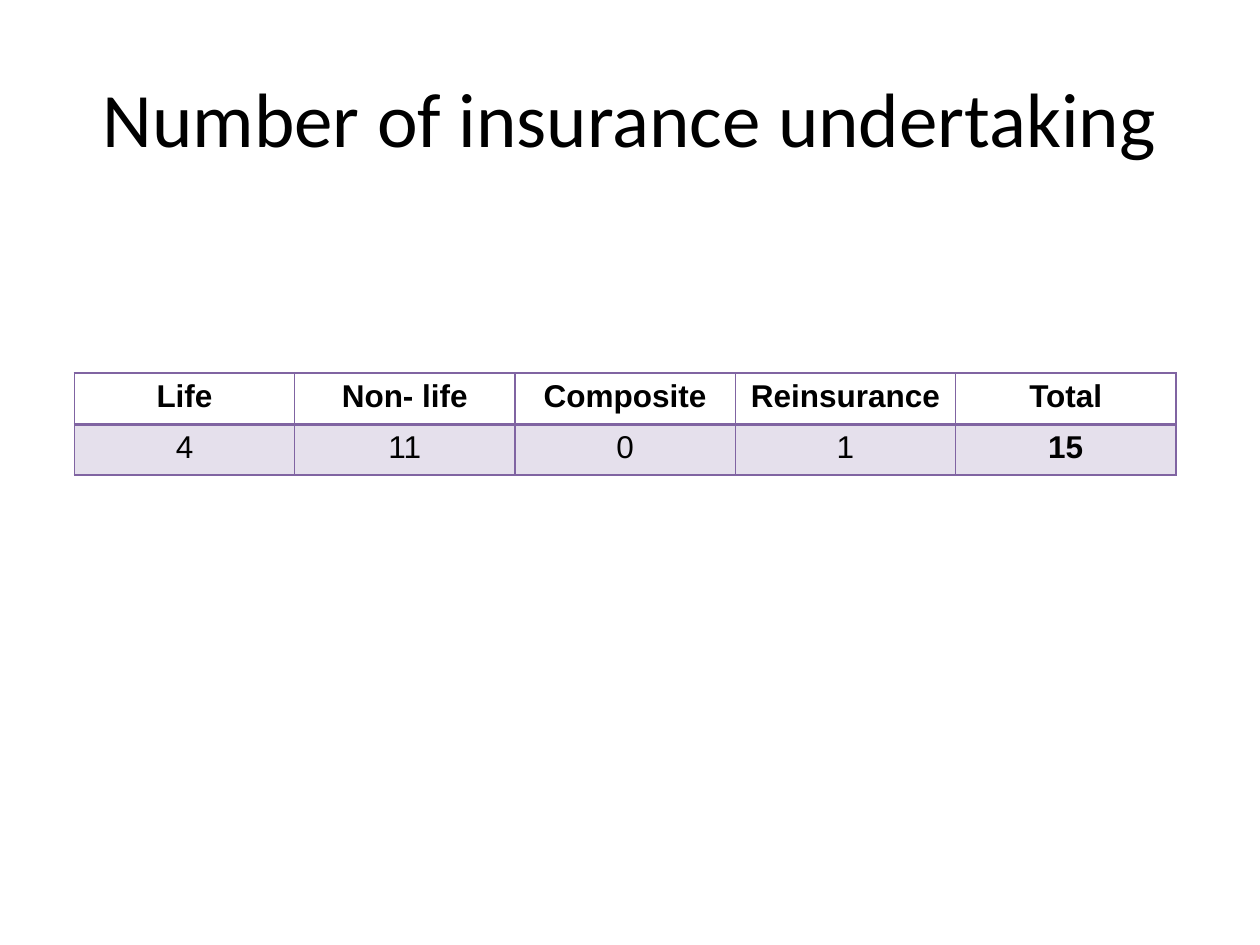
import pptx
import pptx.dml.color
import pptx.enum.text
import pptx.oxml.ns
import pptx.util
from lxml import etree

Pt = pptx.util.Pt
RGBColor = pptx.dml.color.RGBColor
CENTER = pptx.enum.text.PP_ALIGN.CENTER
MIDDLE = pptx.enum.text.MSO_ANCHOR.MIDDLE
qn = pptx.oxml.ns.qn

# Content
TITLE = "Number of insurance undertaking"
ROWS = [
    ["Life", "Non- life", "Composite", "Reinsurance", "Total"],
    ["4", "11", "0", "1", "15"],
]
COLORS = {"text": "000000", "accent": "8064A2"}

# Layout in points
SLIDE_SIZE = (720, 540)
TITLE_BOX = (36, 21.6, 648, 90)
TABLE_LEFT, TABLE_TOP = 42.5, 213.1
COLUMN_WIDTH, ROW_HEIGHT = 125.9, 29.2
LINE, HEADER_LINE = 1, 2
BAND_OPACITY = 20


def style_paragraph(paragraph, font_name, size, bold=False):
    paragraph.alignment = CENTER
    paragraph.font.name = font_name
    paragraph.font.size = Pt(size)
    paragraph.font.bold = bold
    paragraph.font.color.rgb = RGBColor.from_string(COLORS["text"])


def add_border(properties, position, side, width):
    line = etree.Element(qn(f"a:ln{side}"), w=str(int(Pt(width))))
    fill = etree.SubElement(line, qn("a:solidFill"))
    etree.SubElement(fill, qn("a:srgbClr"), val=COLORS["accent"])
    properties.insert(position, line)


presentation = pptx.Presentation()
presentation.slide_width, presentation.slide_height = map(Pt, SLIDE_SIZE)
slide = presentation.slides.add_slide(presentation.slide_layouts[6])

# Title
title_frame = slide.shapes.add_textbox(*map(Pt, TITLE_BOX)).text_frame
title_frame.word_wrap = True
title_frame.vertical_anchor = MIDDLE
title_frame.text = TITLE
style_paragraph(title_frame.paragraphs[0], "Calibri", 44)

# Table
row_count, column_count = len(ROWS), len(ROWS[0])
table = slide.shapes.add_table(
    row_count, column_count, Pt(TABLE_LEFT), Pt(TABLE_TOP),
    Pt(COLUMN_WIDTH * column_count), Pt(ROW_HEIGHT * row_count)).table
for column in table.columns:
    column.width = Pt(COLUMN_WIDTH)

for row_index, values in enumerate(ROWS):
    table.rows[row_index].height = Pt(ROW_HEIGHT)
    is_header = row_index == 0
    for column_index, value in enumerate(values):
        cell = table.cell(row_index, column_index)
        cell.text = value
        is_total = column_index == column_count - 1
        style_paragraph(cell.text_frame.paragraphs[0], "Arial", 18, is_header or is_total)

        # Clear header, translucent values
        if is_header:
            cell.fill.background()
        else:
            cell.fill.solid()
            cell.fill.fore_color.rgb = RGBColor.from_string(COLORS["accent"])
            color = cell.fill._xPr.find(".//" + qn("a:srgbClr"))
            etree.SubElement(color, qn("a:alpha"), val=str(BAND_OPACITY * 1000))

        # Borders, heavier between header and values
        widths = {"L": LINE, "R": LINE,
                  "T": LINE if is_header else HEADER_LINE,
                  "B": HEADER_LINE if is_header else LINE}
        for position, (side, width) in enumerate(widths.items()):
            add_border(cell._tc.get_or_add_tcPr(), position, side, width)

presentation.save("out.pptx")
